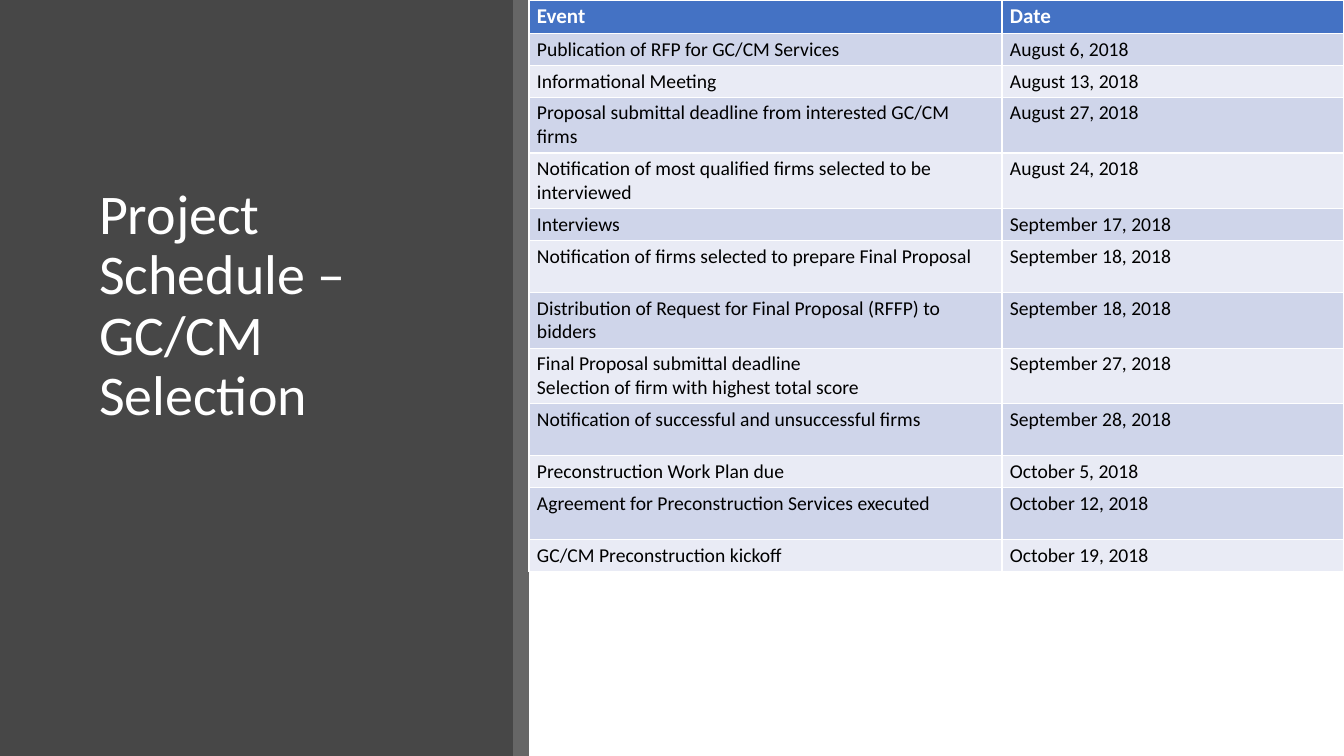
from dataclasses import dataclass

from lxml.etree import SubElement
from pptx import Presentation
from pptx.dml.color import RGBColor as Rgb
from pptx.enum.shapes import MSO_SHAPE as Shape
from pptx.enum.text import MSO_ANCHOR as Anchor, MSO_AUTO_SIZE as Fit, PP_ALIGN as Align
from pptx.oxml.ns import qn
from pptx.util import Emu, Pt

TITLE = "Project Schedule – GC/CM Selection"
HEAD = ("Event", "Date")
SHORT, TALL = 29, 52
EVENTS = [
    ("Publication of RFP for GC/CM Services", "August 6, 2018", SHORT),
    ("Informational Meeting", "August 13, 2018", SHORT),
    ("Proposal submittal deadline from interested GC/CM firms", "August 27, 2018", TALL),
    ("Notification of most qualified firms selected to be interviewed", "August 24, 2018", TALL),
    ("Interviews", "September 17, 2018", SHORT),
    ("Notification of firms selected to prepare Final Proposal", "September 18, 2018", TALL),
    ("Distribution of Request for Final Proposal (RFFP) to bidders", "September 18, 2018", TALL),
    ("Final Proposal submittal deadline\nSelection of firm with highest total score",
     "September 27, 2018", TALL),
    ("Notification of successful and unsuccessful firms", "September 28, 2018", TALL),
    ("Preconstruction Work Plan due", "October 5, 2018", SHORT),
    ("Agreement for Preconstruction Services executed", "October 12, 2018", TALL),
    ("GC/CM Preconstruction kickoff", "October 19, 2018", SHORT),
]


@dataclass(frozen=True)
class Theme:
    font: str = "Calibri"
    white: str = "FFFFFF"
    black: str = "000000"
    panel: str = "404040"
    head: str = "4472C4"
    bands: tuple = ("CFD5EA", "E9EBF5")
    title_size: int = 40
    head_size: int = 15
    body_size: int = 14


THEME = Theme()
WIDE, HIGH = 1344, 756
EDGE, PANEL = 529, 513
COLS = (473, 342)
HEAD_ROW = 31
PAD_X, PAD_Y = 8, 4


def px(n):
    return Emu(round(n * 914400 / 100.8))


def paint(fill, color):
    fill.solid()
    fill.fore_color.rgb = Rgb.from_string(color)


def style(frame, size, color, bold=False):
    for para in frame.paragraphs:
        font = para.font
        font.name, font.size, font.bold = THEME.font, Pt(size), bold
        font.color.rgb = Rgb.from_string(color)


def add_panel(slide, width, color, alpha):
    """Add a full-height panel at the left; alpha is opacity in percent."""
    panel = slide.shapes.add_shape(Shape.RECTANGLE, 0, 0, px(width), px(HIGH))
    panel.shadow.inherit = False
    panel.line.fill.background()
    paint(panel.fill, color)
    tint = panel.fill._xPr.find(".//" + qn("a:srgbClr"))
    SubElement(tint, qn("a:alpha"), val=str(alpha * 1000))


def place_title(slide):
    title = slide.shapes.title
    slide.shapes._spTree.append(title._element)
    title.left, title.top, title.width, title.height = map(px, (89, 124, 369, 309))
    frame = title.text_frame
    frame.text = TITLE
    frame.auto_size, frame.vertical_anchor = Fit.NONE, Anchor.BOTTOM
    para = frame.paragraphs[0]
    para.alignment, para.line_spacing = Align.LEFT, 0.9
    style(frame, THEME.title_size, THEME.white)


def add_schedule(slide):
    rows = [(*HEAD, HEAD_ROW), *EVENTS]
    total = sum(row[-1] for row in rows)
    table = slide.shapes.add_table(
        len(rows), len(COLS), px(EDGE), 0, px(sum(COLS)), px(total)).table
    for col, width in zip(table.columns, COLS):
        col.width = px(width)
    for i, (*texts, height) in enumerate(rows):
        table.rows[i].height = px(height)
        for j, text in enumerate(texts):
            cell = table.cell(i, j)
            cell.text = text
            cell.margin_left = cell.margin_right = px(PAD_X)
            cell.margin_top = cell.margin_bottom = px(PAD_Y)
            if i == 0:
                paint(cell.fill, THEME.head)
                style(cell.text_frame, THEME.head_size, THEME.white, True)
            else:
                paint(cell.fill, THEME.bands[(i - 1) % 2])
                style(cell.text_frame, THEME.body_size, THEME.black)


def main():
    deck = Presentation()
    deck.slide_width, deck.slide_height = px(WIDE), px(HIGH)
    slide = deck.slides.add_slide(deck.slide_layouts.get_by_name("Title Only"))
    paint(slide.background.fill, THEME.white)
    add_panel(slide, EDGE, THEME.black, 60)
    add_panel(slide, PANEL, THEME.panel, 80)
    place_title(slide)
    add_schedule(slide)
    deck.save("out.pptx")


if __name__ == "__main__":
    main()
